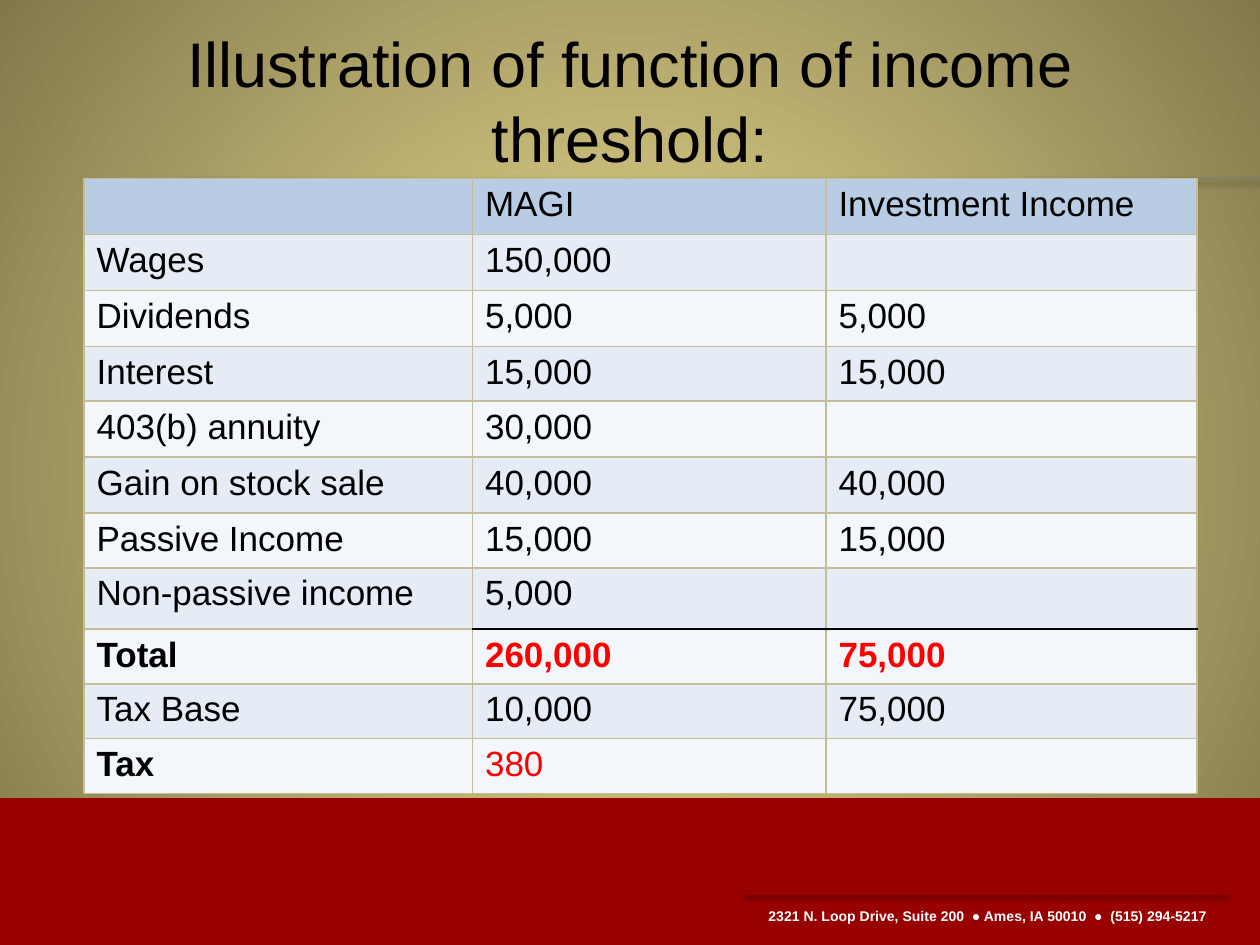
from lxml import etree
from pptx import Presentation
from pptx.dml.color import RGBColor
from pptx.enum.shapes import MSO_CONNECTOR, MSO_SHAPE
from pptx.enum.text import MSO_ANCHOR, MSO_AUTO_SIZE, PP_ALIGN
from pptx.oxml.ns import qn
from pptx.util import Pt

STRAIGHT = MSO_CONNECTOR.STRAIGHT
RECTANGLE = MSO_SHAPE.RECTANGLE
MIDDLE = MSO_ANCHOR.MIDDLE
FIT_SHAPE = MSO_AUTO_SIZE.SHAPE_TO_FIT_TEXT
CENTER = PP_ALIGN.CENTER

BLACK = RGBColor(0x00, 0x00, 0x00)
WHITE = RGBColor(0xFF, 0xFF, 0xFF)
RED = RGBColor(0xFF, 0x00, 0x00)
CARDINAL = RGBColor(0x99, 0x00, 0x00)
GRAY = RGBColor(0x7C, 0x7C, 0x7C)
TAN = RGBColor(0xC4, 0xBD, 0x97)
GOLD = RGBColor(0xF1, 0xE1, 0x93)
OLIVE = RGBColor(0x81, 0x79, 0x4C)
HEADER_BLUE = RGBColor(0xB8, 0xCC, 0xE4)
BAND_BLUE = RGBColor(0xE6, 0xEC, 0xF5)
PALE_BLUE = RGBColor(0xF3, 0xF6, 0xFA)

FONT = "Arial"
ROWS = [
    ("", "MAGI", "Investment Income"),
    ("Wages", "150,000", ""),
    ("Dividends", "5,000", "5,000"),
    ("Interest", "15,000", "15,000"),
    ("403(b) annuity", "30,000", ""),
    ("Gain on stock sale", "40,000", "40,000"),
    ("Passive Income", "15,000", "15,000"),
    ("Non-passive income", "5,000", ""),
    ("Total", "260,000", "75,000"),
    ("Tax Base", "10,000", "75,000"),
    ("Tax", "380", ""),
]
COLUMN_WIDTHS = [222, 202, 212]
ROW_HEIGHTS = [32, 32, 32, 31.3, 32, 32, 31.3, 35, 31.3, 31.3, 31.3]
TOTAL_ROW = 8
TAX_ROW = 10


def format_text(text_frame, size, color, bold=False):
    """Apply one font style to every run of a text frame."""
    for paragraph in text_frame.paragraphs:
        for run in paragraph.runs:
            run.font.name = FONT
            run.font.size = Pt(size)
            run.font.bold = bold
            run.font.color.rgb = color


def set_background(slide):
    """Fill the background with a gradient running out from the centre."""
    fill = slide.background.fill
    fill.gradient()
    for stop, color in zip(fill.gradient_stops, (GOLD, OLIVE)):
        stop.color.rgb = color
    gradient = slide.element.find(".//" + qn("a:gradFill"))
    gradient.remove(gradient.find(qn("a:lin")))
    circle = etree.SubElement(gradient, qn("a:path"), {"path": "circle"})
    center = dict.fromkeys("ltrb", "50000")
    etree.SubElement(circle, qn("a:fillToRect"), center)


def add_band(slide):
    """Add the solid band along the bottom of the slide."""
    band = slide.shapes.add_shape(RECTANGLE, 0, Pt(456), Pt(720), Pt(84))
    band.shadow.inherit = False
    band.fill.solid()
    band.fill.fore_color.rgb = CARDINAL
    band.line.fill.background()


def add_rule(slide, left, right, top, color, width, shadow):
    """Add a horizontal rule; shadow is opacity, blur, distance and angle."""
    rule = slide.shapes.add_connector(STRAIGHT, Pt(left), Pt(top), Pt(right), Pt(top))
    rule.line.color.rgb = color
    rule.line.width = Pt(width)
    opacity, blur, distance, angle = shadow
    effects = etree.SubElement(rule.element.spPr, qn("a:effectLst"))
    outer = etree.SubElement(effects, qn("a:outerShdw"), {
        "blurRad": str(Pt(blur)),
        "dist": str(Pt(distance)),
        "dir": str(angle * 60000),
        "rotWithShape": "0",
    })
    shade = etree.SubElement(outer, qn("a:srgbClr"), {"val": str(BLACK)})
    etree.SubElement(shade, qn("a:alpha"), {"val": str(opacity * 1000)})


def add_address(slide):
    """Add the address line at the bottom right."""
    box = slide.shapes.add_textbox(Pt(432), Pt(514.8), Pt(279.4), Pt(17))
    text_frame = box.text_frame
    text_frame.word_wrap = False
    text_frame.auto_size = FIT_SHAPE
    text_frame.text = "2321 N. Loop Drive, Suite 200  ● Ames, IA 50010  ●  (515) 294-5217"
    format_text(text_frame, 8, WHITE, bold=True)


def set_title(slide):
    """Place and format the slide title."""
    title = slide.shapes.title
    title.left, title.top, title.width, title.height = Pt(18), Pt(12), Pt(684), Pt(90)
    text_frame = title.text_frame
    text_frame.text = "Illustration of function of income threshold:"
    text_frame.vertical_anchor = MIDDLE
    text_frame.word_wrap = True
    text_frame.paragraphs[0].alignment = CENTER
    format_text(text_frame, 36, BLACK)


def set_borders(cell, top, bottom):
    """Draw the four cell borders, tan at the sides."""
    properties = cell._tc.get_or_add_tcPr()
    sides = {"a:lnL": TAN, "a:lnR": TAN, "a:lnT": top, "a:lnB": bottom}
    for position, (side, color) in enumerate(sides.items()):
        line = etree.Element(qn(side), {"w": str(Pt(1))})
        fill = etree.SubElement(line, qn("a:solidFill"))
        etree.SubElement(fill, qn("a:srgbClr"), {"val": str(color)})
        properties.insert(position, line)


def format_cell(cell, row, column):
    """Style a cell by its place in the table."""
    cell.fill.solid()
    if row == 0:
        cell.fill.fore_color.rgb = HEADER_BLUE
    else:
        cell.fill.fore_color.rgb = BAND_BLUE if row % 2 else PALE_BLUE
    is_value = column > 0
    top = BLACK if is_value and row == TOTAL_ROW else TAN
    bottom = BLACK if is_value and row == TOTAL_ROW - 1 else TAN
    set_borders(cell, top, bottom)
    color = RED if is_value and row in (TOTAL_ROW, TAX_ROW) else BLACK
    bold = row == TOTAL_ROW or (row == TAX_ROW and not is_value)
    format_text(cell.text_frame, 20, color, bold)


def add_income_table(slide):
    """Add the table of income items and the resulting tax."""
    frame = slide.shapes.add_table(
        len(ROWS), len(COLUMN_WIDTHS), Pt(48), Pt(102),
        Pt(sum(COLUMN_WIDTHS)), Pt(sum(ROW_HEIGHTS)),
    )
    table = frame.table
    for column, width in zip(table.columns, COLUMN_WIDTHS):
        column.width = Pt(width)
    for row, height in zip(table.rows, ROW_HEIGHTS):
        row.height = Pt(height)
    for row, texts in enumerate(ROWS):
        for column, text in enumerate(texts):
            cell = table.cell(row, column)
            cell.text_frame.text = text
            format_cell(cell, row, column)


def main():
    """Build the slide and save it."""
    presentation = Presentation()
    presentation.slide_width, presentation.slide_height = Pt(720), Pt(540)
    slide = presentation.slides.add_slide(presentation.slide_layouts[5])
    set_background(slide)
    add_band(slide)
    add_rule(slide, 102, 720, 102, GRAY, 1, (40, 4, 3, 45))
    add_address(slide)
    add_rule(slide, 426, 702, 510.5, CARDINAL, 2, (38, 3.1, 1.6, 90))
    set_title(slide)
    add_income_table(slide)
    presentation.save("out.pptx")


if __name__ == "__main__":
    main()
